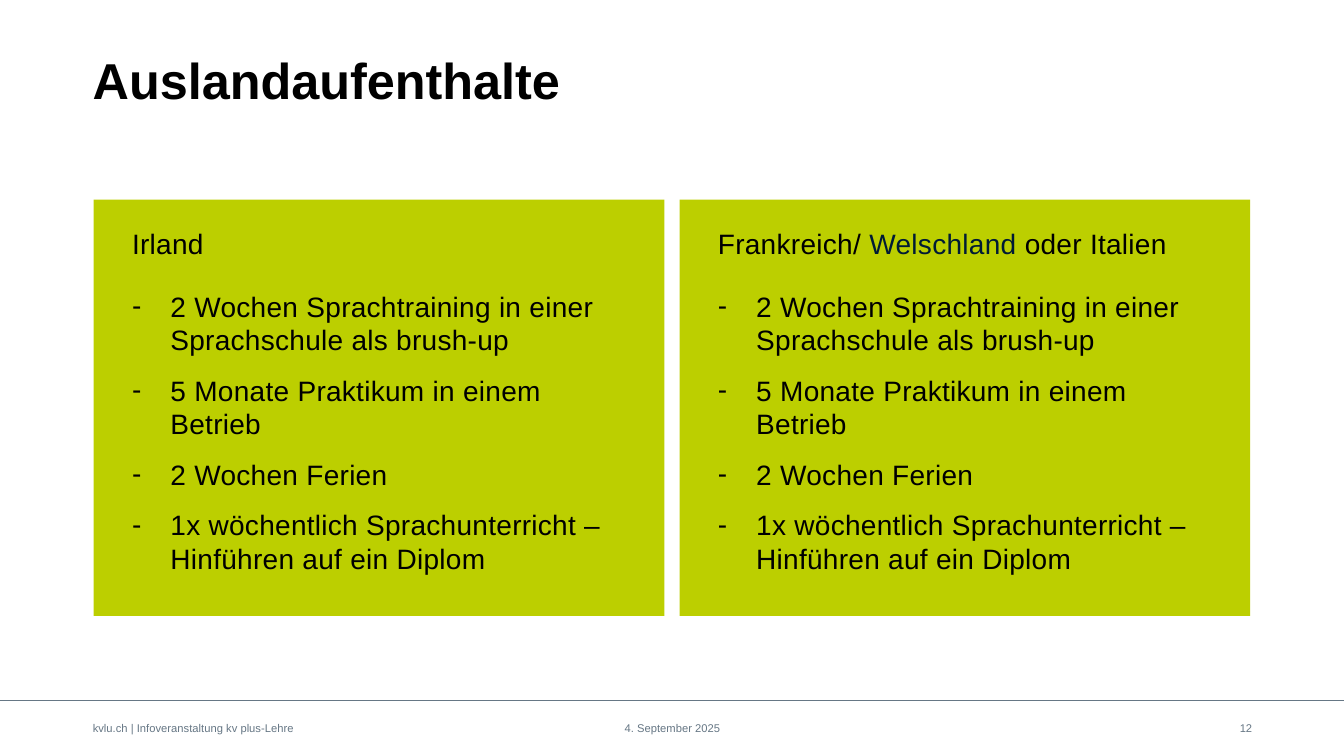
from pptx import Presentation
from pptx.dml.color import RGBColor as RGB
from pptx.enum.shapes import MSO_CONNECTOR as Conn, MSO_SHAPE as Shape
from pptx.enum.text import MSO_ANCHOR as Anchor, PP_ALIGN as Align
from pptx.oxml.ns import qn
from pptx.util import Inches, Pt
from lxml.etree import SubElement

BLACK = RGB(0, 0, 0)
NAVY = RGB(0x00, 0x1B, 0x35)
GREY = RGB(0x66, 0x77, 0x85)
LIME = RGB(0xBC, 0xCF, 0x00)

TITLE = "Auslandaufenthalte"
POINTS = [
    "2 Wochen Sprachtraining in einer Sprachschule als brush-up",
    "5 Monate Praktikum in einem Betrieb",
    "2 Wochen Ferien",
    "1x wöchentlich Sprachunterricht – Hinführen auf ein Diplom",
]
CARDS = [
    [("Irland", BLACK)],
    [("Frankreich/ ", BLACK), ("Welschland ", NAVY), ("oder Italien", BLACK)],
]
FOOTER = [
    ("kvlu.ch | Infoveranstaltung kv plus-Lehre", 0.92, 3.31, Align.LEFT),
    ("4. September 2025", 5.17, 3, Align.CENTER),
    ("12", 9.42, 3, Align.RIGHT),
]

WIDE, HIGH = 13.33, 7.5
LEFT, STEP = 0.92, 5.81
RULE = 6.95
PAD, HANG = 0.39, 0.38
HEAD = {"size": Pt(36), "bold": True}
BODY = {"size": Pt(20)}
SMALL = {"size": Pt(8)}

prs = Presentation()
prs.slide_width, prs.slide_height = Inches(WIDE), Inches(HIGH)
slide = prs.slides.add_slide(prs.slide_layouts[6])
shapes = slide.shapes


def add_box(x, y, w, h, pad=0, anchor=Anchor.TOP):
    frame = shapes.add_textbox(*map(Inches, (x, y, w, h))).text_frame
    look = {
        "word_wrap": True, "vertical_anchor": anchor,
        "margin_left": Inches(pad), "margin_right": Inches(pad),
        "margin_top": 0, "margin_bottom": 0,
    }
    for name, value in look.items():
        setattr(frame, name, value)
    return frame


def add_runs(para, parts, look, track=0):
    for text, color in parts:
        run = para.add_run()
        run.text = text
        run.font.name = "Arial"
        for name, value in look.items():
            setattr(run.font, name, value)
        run.font.color.rgb = color
        if track:
            run.font._element.set("spc", str(track))


def add_dash(para):
    props = para._p.get_or_add_pPr()
    props.set("marL", str(Inches(HANG)))
    props.set("indent", str(-Inches(HANG)))
    SubElement(props, qn("a:buFont")).set("typeface", "Arial")
    SubElement(props, qn("a:buChar")).set("char", "-")


rule = shapes.add_connector(
    Conn.STRAIGHT, 0, Inches(RULE), Inches(WIDE), Inches(RULE))
rule.line.color.rgb = GREY
rule.line.width = Pt(1)
SubElement(rule._element.spPr, qn("a:effectLst"))

title = add_box(LEFT, 0.53, 11.5, 1.29).paragraphs[0]
title.line_spacing = Pt(40)
add_runs(title, [(TITLE, BLACK)], HEAD)

for col, name in enumerate(CARDS):
    x = LEFT + col * STEP
    card = shapes.add_shape(
        Shape.RECTANGLE, *map(Inches, (x + 0.01, 1.98, 5.66, 4.13)))
    card.shadow.inherit = False
    card.fill.solid()
    card.fill.fore_color.rgb = LIME
    card.line.fill.background()

    head = add_box(x, 2.25, 5.45, 0.4, PAD).paragraphs[0]
    head.line_spacing = Pt(24)
    add_runs(head, name, BODY, 20)

    frame = add_box(x, 2.87, 5.75, 3.01, PAD)
    for row, point in enumerate(POINTS):
        para = frame.add_paragraph() if row else frame.paragraphs[0]
        add_dash(para)
        para.line_spacing = Pt(24)
        if row:
            para.space_before = Pt(12)
        add_runs(para, [(point, BLACK)], BODY, 20)

for text, x, w, align in FOOTER:
    para = add_box(x, RULE, w, HIGH - RULE, 0, Anchor.MIDDLE).paragraphs[0]
    para.alignment = align
    add_runs(para, [(text, GREY)], SMALL)

prs.save("out.pptx")
